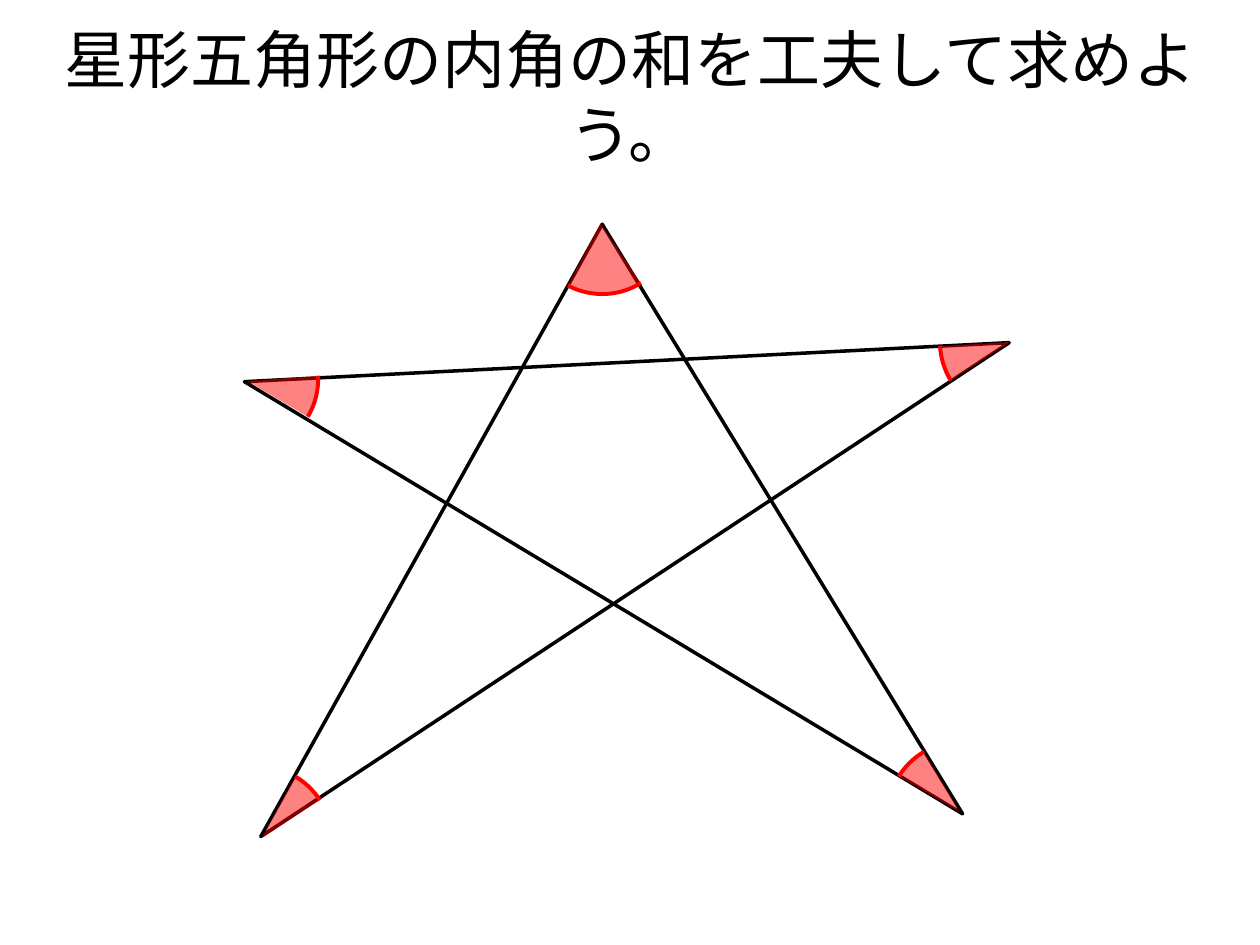
from lxml import etree
from pptx import Presentation
from pptx.dml.color import RGBColor
from pptx.enum.shapes import MSO_SHAPE
from pptx.enum.text import MSO_ANCHOR, PP_ALIGN
from pptx.oxml.ns import qn
from pptx.util import Inches, Pt

BLACK = RGBColor(0x00, 0x00, 0x00)
RED = RGBColor(0xFF, 0x00, 0x00)
ARC = MSO_SHAPE.ARC
MIDDLE = MSO_ANCHOR.MIDDLE
CENTER = PP_ALIGN.CENTER
TITLE_ONLY = 5

deck = Presentation()
deck.slide_width = Inches(10)
deck.slide_height = Inches(7.5)
page = deck.slides.add_slide(deck.slide_layouts[TITLE_ONLY])

# Title
title = page.shapes.title
title.left, title.top = Inches(0.2), Inches(0.29)
title.width, title.height = Inches(9.61), Inches(0.94)
frame = title.text_frame
frame.text = "星形五角形の内角の和を工夫して求めよう。"
frame.vertical_anchor = MIDDLE
para = frame.paragraphs[0]
para.alignment = CENTER
font = para.runs[0].font
font.name = "Calibri"
font.size = Pt(36)
font.color.rgb = BLACK

# Star drawn in one stroke
star_tips = [(4.78, 1.78), (2.07, 6.64), (8.01, 2.72), (1.94, 3.03), (7.64, 6.46)]
star_points = [(Inches(x), Inches(y)) for x, y in star_tips]
builder = page.shapes.build_freeform(*star_points[0])
builder.add_line_segments(star_points[1:], close=True)
star = builder.convert_to_shape()
star.shadow.inherit = False
star.fill.background()
star.line.color.rgb = BLACK
star.line.width = Pt(2)

# Angle marks at the tips: left, top, rotation, start and end of the arc
angle_marks = [
    (1.41, 2.45, 208.8, 88.08, 109.04),
    (1.52, 6.08, 151.4, 88.29, 105.17),
    (7.06, 5.87, 57.6, 91.71, 109.04),
    (7.46, 2.14, 354.9, 91.15, 109.04),
    (4.21, 1.2, 296, 71.75, 109.04),
]
for left, top, rotation, start, end in angle_marks:
    mark = page.shapes.add_shape(
        ARC, Inches(left), Inches(top), Inches(1.11), Inches(1.15))
    mark.rotation = rotation
    mark.adjustments[0] = start
    mark.adjustments[1] = end
    mark.shadow.inherit = False
    mark.fill.solid()
    mark.fill.fore_color.rgb = RED
    fill_color = mark.fill._xPr.find(qn("a:solidFill")).find(qn("a:srgbClr"))
    etree.SubElement(fill_color, qn("a:alpha"), val="49000")
    mark.line.color.rgb = RED
    mark.line.width = Pt(2.25)

deck.save("out.pptx")
